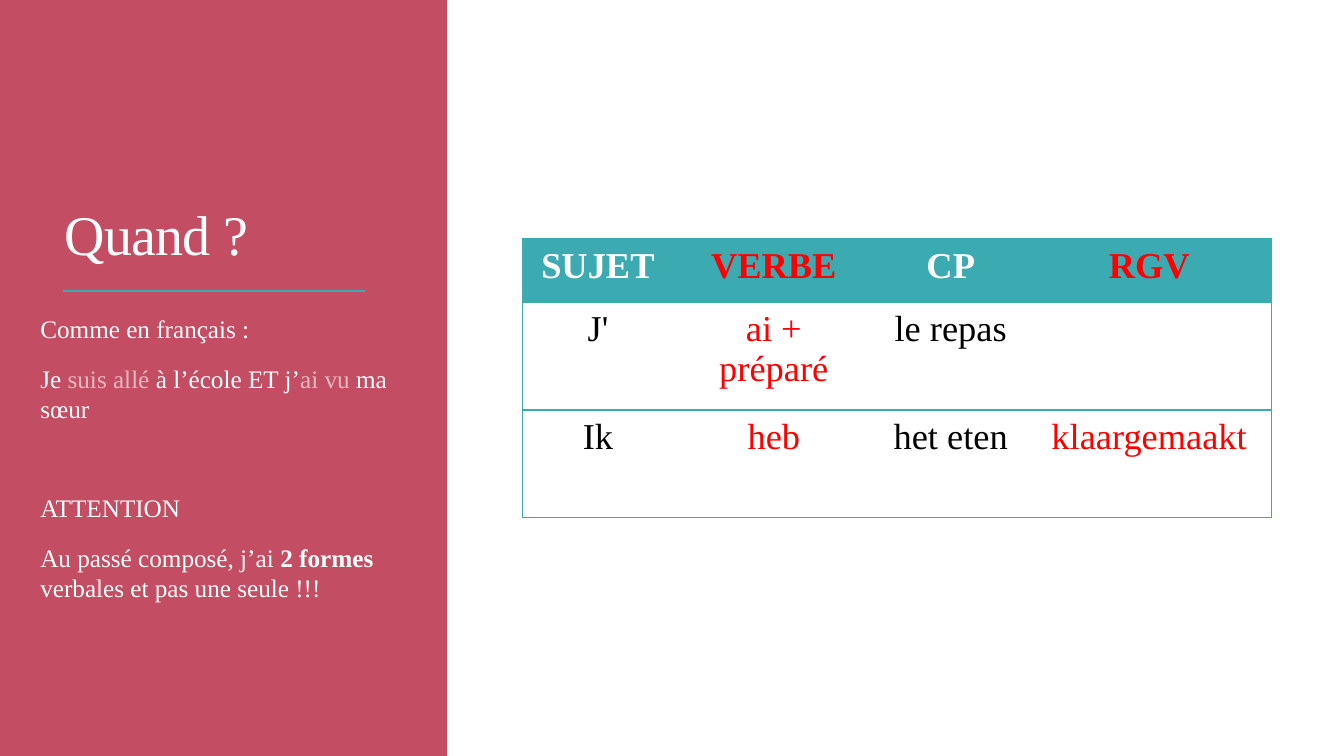
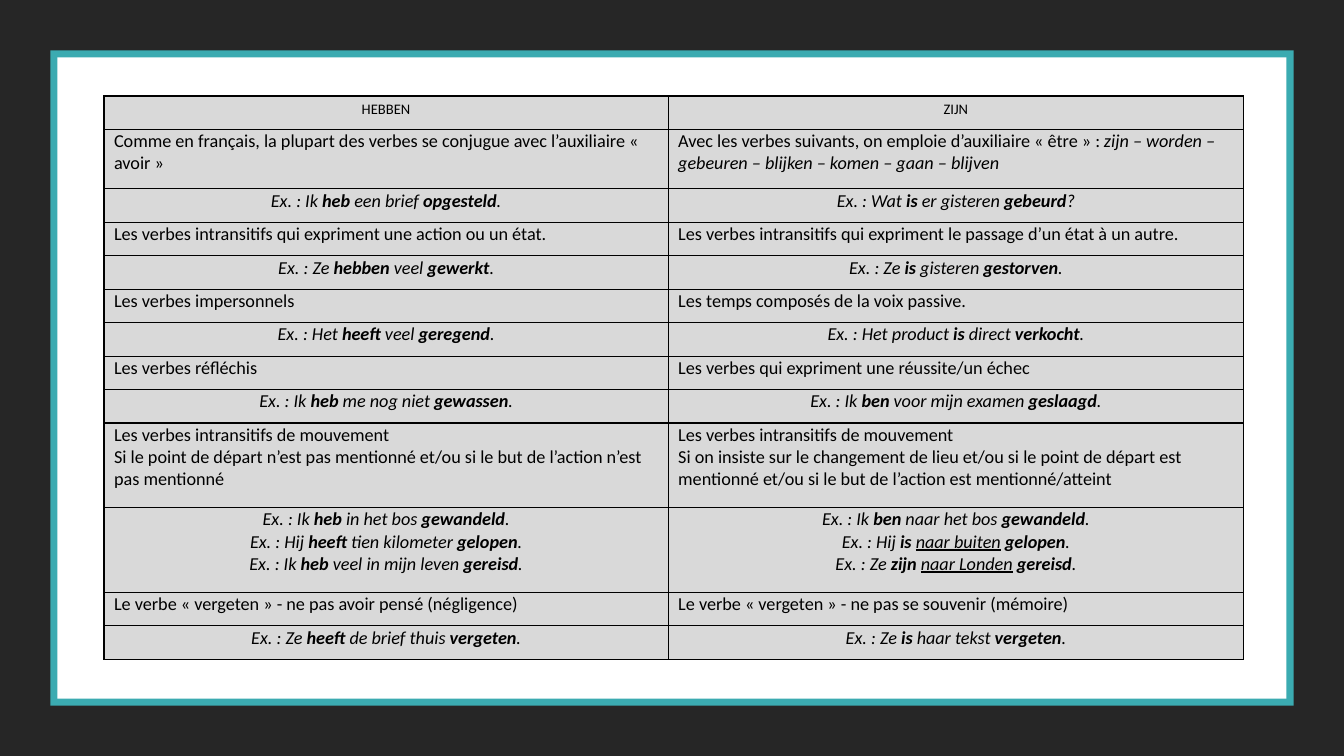
from lxml.etree import SubElement
from pptx import Presentation
from pptx.dml.color import RGBColor
from pptx.enum.shapes import MSO_CONNECTOR as Connector, MSO_SHAPE as Shape
from pptx.enum.text import MSO_ANCHOR as Anchor, PP_ALIGN as Align
from pptx.oxml.ns import qn
from pptx.util import Pt

COLOURS = {
    "white": "FFFFFF",
    "black": "000000",
    "dark": "262626",
    "teal": "3BABB1",
    "rose": "C34D62",
    "pale": "E7B8C0",
    "red": "FF0000",
    "grey": "D9D9D9",
}
SERIF, SANS = "Times New Roman", "Calibri"
MARKS = {
    "*": {"bold": True},
    "_": {"underline": True},
    "~": {"italic": True},
    "^": {"colour": "pale"},
}
SIDES = "LRTB"

QUESTION_NOTES = [
    ("Comme en français :", 0),
    ("Je ^suis allé ^à l’école ET j’^ai vu ^ma sœur", 12),
    ("ATTENTION", 46.7),
    ("Au passé composé, j’ai *2 formes* verbales et pas une seule !!!", 12),
]
SENTENCES = [
    ("SUJET", "VERBE", "CP", "RGV"),
    ("J'", "ai + préparé", "le repas", ""),
    ("Ik", "heb", "het eten", "klaargemaakt"),
]
AUXILIARIES = [
    ("hebben", "zijn"),
    ("Comme en français, la plupart des verbes se conjugue avec l’auxiliaire « avoir »",
     "Avec les verbes suivants, on emploie d’auxiliaire « être » : "
     "~zijn – worden – gebeuren – blijken – komen – gaan – blijven~"),
    ("Ex. : Ik *heb* een brief *opgesteld*.",
     "Ex. : Wat *is* er gisteren *gebeurd*?"),
    ("Les verbes intransitifs qui expriment une action ou un état.",
     "Les verbes intransitifs qui expriment le passage d’un état à un autre."),
    ("Ex. : Ze *hebben* veel *gewerkt*.",
     "Ex. : Ze *is* gisteren *gestorven*."),
    ("Les verbes impersonnels", "Les temps composés de la voix passive."),
    ("Ex. : Het *heeft* veel *geregend*.",
     "Ex. : Het product *is* direct *verkocht*."),
    ("Les verbes réfléchis", "Les verbes qui expriment une réussite/un échec"),
    ("Ex. : Ik *heb* me nog niet *gewassen*.",
     "Ex. : Ik *ben* voor mijn examen *geslaagd*."),
    ("Les verbes intransitifs de mouvement\n"
     "Si le point de départ n’est pas mentionné et/ou si le but de l’action n’est pas mentionné",
     "Les verbes intransitifs de mouvement\n"
     "Si on insiste sur le changement de lieu et/ou si le point de départ est mentionné "
     "et/ou si le but de l’action est mentionné/atteint"),
    ("Ex. : Ik *heb* in het bos *gewandeld*.\n"
     "Ex. : Hij *heeft* tien kilometer *gelopen*.\n"
     "Ex. : Ik *heb* veel in mijn leven *gereisd*.",
     "Ex. : Ik *ben* naar het bos *gewandeld*.\n"
     "Ex. : Hij *is *_naar buiten_ *gelopen*.\n"
     "Ex. : Ze *zijn *_naar Londen_ *gereisd*."),
    ("Le verbe « vergeten » - ne pas avoir pensé (négligence)",
     "Le verbe « vergeten » - ne pas se souvenir (mémoire)"),
    ("Ex. : Ze *heeft* de brief thuis *vergeten*.",
     "Ex. : Ze *is* haar tekst *vergeten*."),
]


def rgb(name):
    return RGBColor.from_string(COLOURS[name])


def paint(target, colour):
    target.fill.solid()
    target.fill.fore_color.rgb = rgb(colour)


def split_marks(text):
    active, piece = {}, ""
    for letter in text:
        if letter not in MARKS:
            piece += letter
            continue
        if piece:
            yield piece, dict(active)
        piece = ""
        for key, value in MARKS[letter].items():
            if key in active:
                del active[key]
            else:
                active[key] = value
    if piece:
        yield piece, active


def write(para, text, size=18, font=SERIF, colour="white", bold=False, italic=False,
          align=Align.LEFT, before=0, after=0, leading=None, indent=0,
          spacing=0, small_caps=False):
    para.alignment = align
    para.space_before, para.space_after = Pt(before), Pt(after)
    if leading:
        para.line_spacing = leading
    if indent:
        para._p.get_or_add_pPr().set("marL", str(Pt(indent)))
    base = {"colour": colour, "bold": bold, "italic": italic, "underline": False}
    for piece, changes in split_marks(text):
        look = base | changes
        span = para.add_run()
        span.text = piece
        span.font.size, span.font.name = Pt(size), font
        span.font.color.rgb = rgb(look["colour"])
        span.font.bold, span.font.italic = look["bold"], look["italic"]
        if look["underline"]:
            span.font.underline = True
        properties = span._r.get_or_add_rPr()
        if spacing:
            properties.set("spc", str(round(spacing * 100)))
        if small_caps:
            properties.set("cap", "small")


def next_para(frame, index):
    return frame.add_paragraph() if index else frame.paragraphs[0]


def add_panel(page, left, top, width, height, colour):
    panel = page.shapes.add_shape(Shape.RECTANGLE, Pt(left), Pt(top), Pt(width), Pt(height))
    panel.shadow.inherit = False
    panel.line.fill.background()
    paint(panel, colour)


def add_rule(page, left, right, top, colour, weight):
    rule = page.shapes.add_connector(Connector.STRAIGHT, Pt(left), Pt(top), Pt(right), Pt(top))
    rule.line.color.rgb = rgb(colour)
    rule.line.width = Pt(weight)
    SubElement(rule._element.spPr, qn("a:effectLst"))


def add_text_box(page, left, top, width, height, anchor=Anchor.TOP, side=7.2):
    frame = page.shapes.add_textbox(Pt(left), Pt(top), Pt(width), Pt(height)).text_frame
    frame.word_wrap = True
    frame.vertical_anchor = anchor
    frame.margin_left = frame.margin_right = Pt(side)
    return frame


def set_borders(cell, sides, colour):
    properties = cell._tc.get_or_add_tcPr()
    for side in SIDES:
        edge = SubElement(properties, qn("a:ln" + side), w=str(Pt(1)))
        if side in sides:
            fill = SubElement(edge, qn("a:solidFill"))
            SubElement(fill, qn("a:srgbClr"), val=COLOURS[colour])
        else:
            SubElement(edge, qn("a:noFill"))


def add_grid(page, left, top, widths, heights):
    table = page.shapes.add_table(len(heights), len(widths), Pt(left), Pt(top),
                                  Pt(sum(widths)), Pt(sum(heights))).table
    table.first_row = table.horz_banding = False
    for column, width in zip(table.columns, widths):
        column.width = Pt(width)
    for row, height in zip(table.rows, heights):
        row.height = Pt(height)
    return table


def fill_cell(cell, text, fill, border, sides, margins, **look):
    set_borders(cell, sides, border)
    paint(cell, fill)
    side, top, bottom = margins
    cell.margin_left = cell.margin_right = Pt(side)
    cell.margin_top, cell.margin_bottom = Pt(top), Pt(bottom)
    for index, line in enumerate(text.split("\n")):
        write(next_para(cell.text_frame, index), line, **look)


def build_question(page):
    add_panel(page, 0, 0, 319.5, 540, "rose")
    title = add_text_box(page, 39, 41, 243, 154, Anchor.BOTTOM)
    write(title.paragraphs[0], "Quand ?", size=40, leading=0.9, spacing=-0.5)
    add_rule(page, 45, 261, 208, "teal", 1.5)

    notes = add_text_box(page, 21.6, 220.5, 281.5, 258.5, side=0)
    for index, (text, before) in enumerate(QUESTION_NOTES):
        write(next_para(notes, index), text, before=before, after=2, indent=7.2)

    table = add_grid(page, 373.5, 170.5, [107.3, 144, 108.7, 175], [45.4, 77, 77])
    last = len(SENTENCES[0]) - 1
    for row, texts in enumerate(SENTENCES):
        header = row == 0
        for column, text in enumerate(texts):
            sides = "TB" + "L" * (column == 0) + "R" * (column == last)
            plain = "white" if header else "black"
            fill_cell(table.cell(row, column), text, "teal" if header else "white",
                      "teal", sides, (10, 5, 5), size=26, bold=header,
                      colour="red" if column % 2 else plain, align=Align.CENTER)


def build_auxiliaries(page):
    paint(page.background, "dark")
    add_panel(page, 36, 36, 888, 468, "teal")
    add_panel(page, 41, 41, 878, 458, "white")

    tall = {1: 42.5, 9: 60.5, 10: 60.5}
    heights = [tall.get(row, 23.9) for row in range(len(AUXILIARIES))]
    table = add_grid(page, 74.3, 68.5, [403, 411], heights)
    for row, texts in enumerate(AUXILIARIES):
        for column, text in enumerate(texts):
            header, example = row == 0, text.startswith("Ex.")
            fill_cell(table.cell(row, column), text, "grey", "black", SIDES, (7.2, 0.7, 0),
                      size=13, font=SANS, colour="black", italic=example, small_caps=header,
                      align=Align.CENTER if header or example else Align.LEFT)


def main():
    deck = Presentation()
    deck.slide_width, deck.slide_height = Pt(960), Pt(540)
    for build in (build_question, build_auxiliaries):
        build(deck.slides.add_slide(deck.slide_layouts[6]))
    deck.save("out.pptx")


if __name__ == "__main__":
    main()
